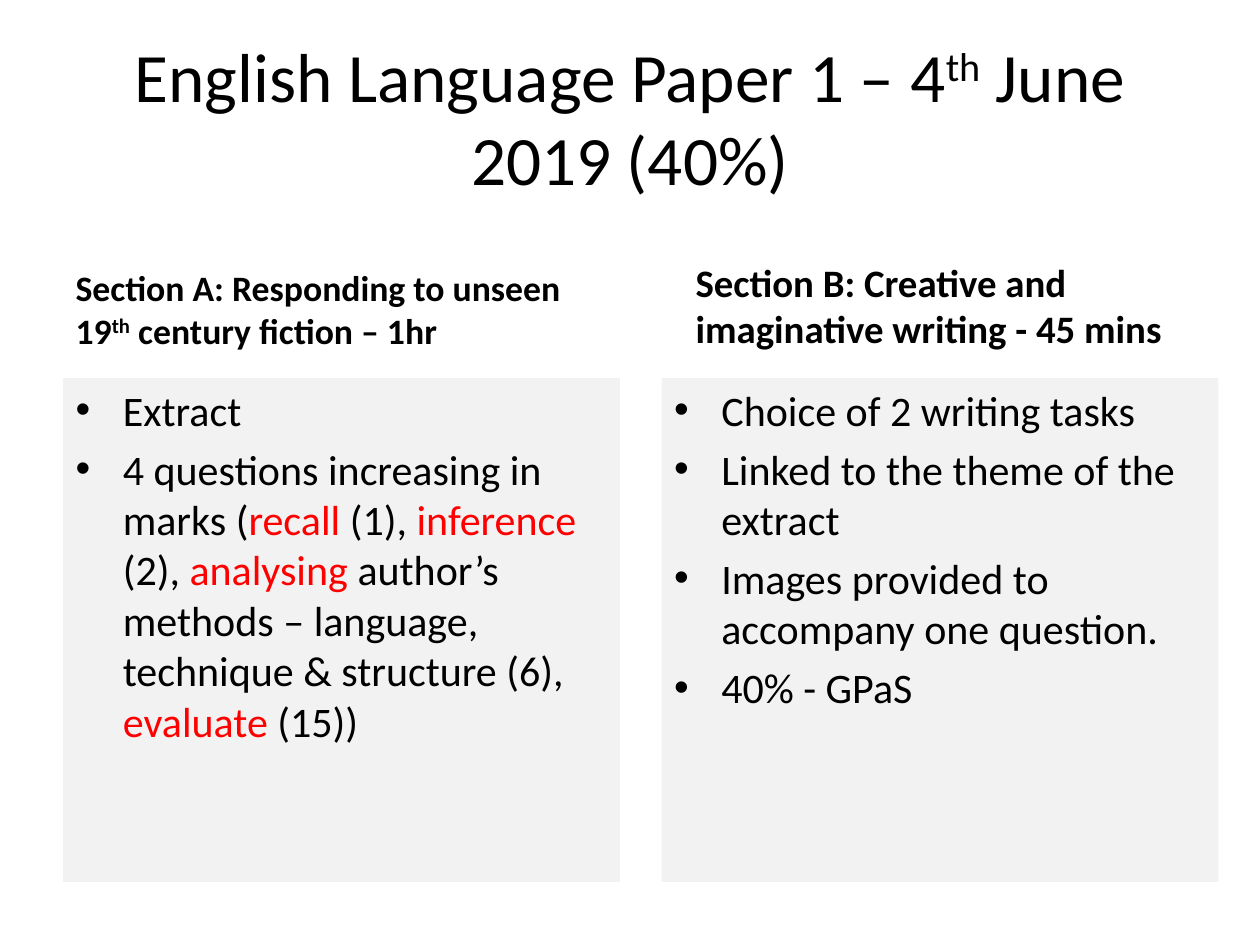
from dataclasses import dataclass

from pptx import Presentation
from pptx import util as u
from pptx.dml import color
from pptx.enum import text

WIDE, HIGH = 10, 7.5
COL, HEAD, LIST = 4.42, 0.7, 4
BLACK, RED, GREY = "000000", "FF0000", "F2F2F2"


@dataclass
class Run:
    txt: str
    hue: str = BLACK
    sup: bool = False


@dataclass
class Part:
    idx: int
    area: tuple[float, float, float, float]
    size: float
    paras: list[list[Run]]
    anchor: text.MSO_ANCHOR
    bold: bool = False
    fill: str = ""


def tint(code: str) -> color.RGBColor:
    return color.RGBColor.from_string(code)


def add_run(para, run: Run, part: Part) -> None:
    item = para.add_run()
    item.text = run.txt
    item.font.name = "Calibri"
    item.font.size = u.Pt(part.size)
    item.font.bold = part.bold
    item.font.color.rgb = tint(run.hue)
    if run.sup:
        item.font._element.set("baseline", "30000")


def draw(slide, part: Part) -> None:
    box = next(p for p in slide.placeholders
               if p.placeholder_format.idx == part.idx)
    box.left, box.top, box.width, box.height = map(u.Inches, part.area)
    if part.fill:
        box.fill.solid()
        box.fill.fore_color.rgb = tint(part.fill)
    frame = box.text_frame
    frame.word_wrap = True
    frame.auto_size = text.MSO_AUTO_SIZE.NONE
    frame.vertical_anchor = part.anchor
    for num, runs in enumerate(part.paras):
        para = frame.add_paragraph() if num else frame.paragraphs[0]
        if not num:
            para.space_before = u.Pt(0)
        for run in runs:
            add_run(para, run, part)


def head(idx: int, left: float, size: float, runs: list[Run]) -> Part:
    return Part(idx, (left, 2.14, COL, HEAD), size, [runs],
                text.MSO_ANCHOR.BOTTOM, bold=True)


def points(idx: int, left: float, paras: list[list[Run]]) -> Part:
    return Part(idx, (left, 3, COL, LIST), 24, paras,
                text.MSO_ANCHOR.TOP, fill=GREY)


PARTS = [
    Part(0, (0.05 * WIDE, 0.04 * HIGH, 0.9 * WIDE, 1.25), 39.6,
         [[Run("English Language Paper 1 – 4"), Run("th", sup=True),
           Run(" June 2019 (40%)")]], text.MSO_ANCHOR.MIDDLE),
    head(1, 0.5, 20.4, [
        Run("Section A: Responding to unseen 19"), Run("th", sup=True),
        Run(" century fiction – 1hr")]),
    points(2, 0.5, [
        [Run("Extract")],
        [Run("4 questions increasing in marks ("), Run("recall ", RED),
         Run("(1), "), Run("inference ", RED), Run("(2), "),
         Run("analysing", RED),
         Run(" author’s methods – language, technique & structure (6), "),
         Run("evaluate", RED), Run(" (15))")]]),
    head(3, 5.42, 22.2, [
        Run("Section B: Creative and imaginative writing - 45 mins")]),
    points(4, 5.25, [
        [Run("Choice of 2 writing tasks")],
        [Run("Linked to the theme of the extract")],
        [Run("Images provided to accompany one question.")],
        [Run("40% - GPaS")]]),
]


def main() -> None:
    deck = Presentation()
    deck.slide_width, deck.slide_height = u.Inches(WIDE), u.Inches(HIGH)
    slide = deck.slides.add_slide(deck.slide_layouts.get_by_name("Comparison"))
    for part in PARTS:
        draw(slide, part)
    deck.save("out.pptx")


if __name__ == "__main__":
    main()
